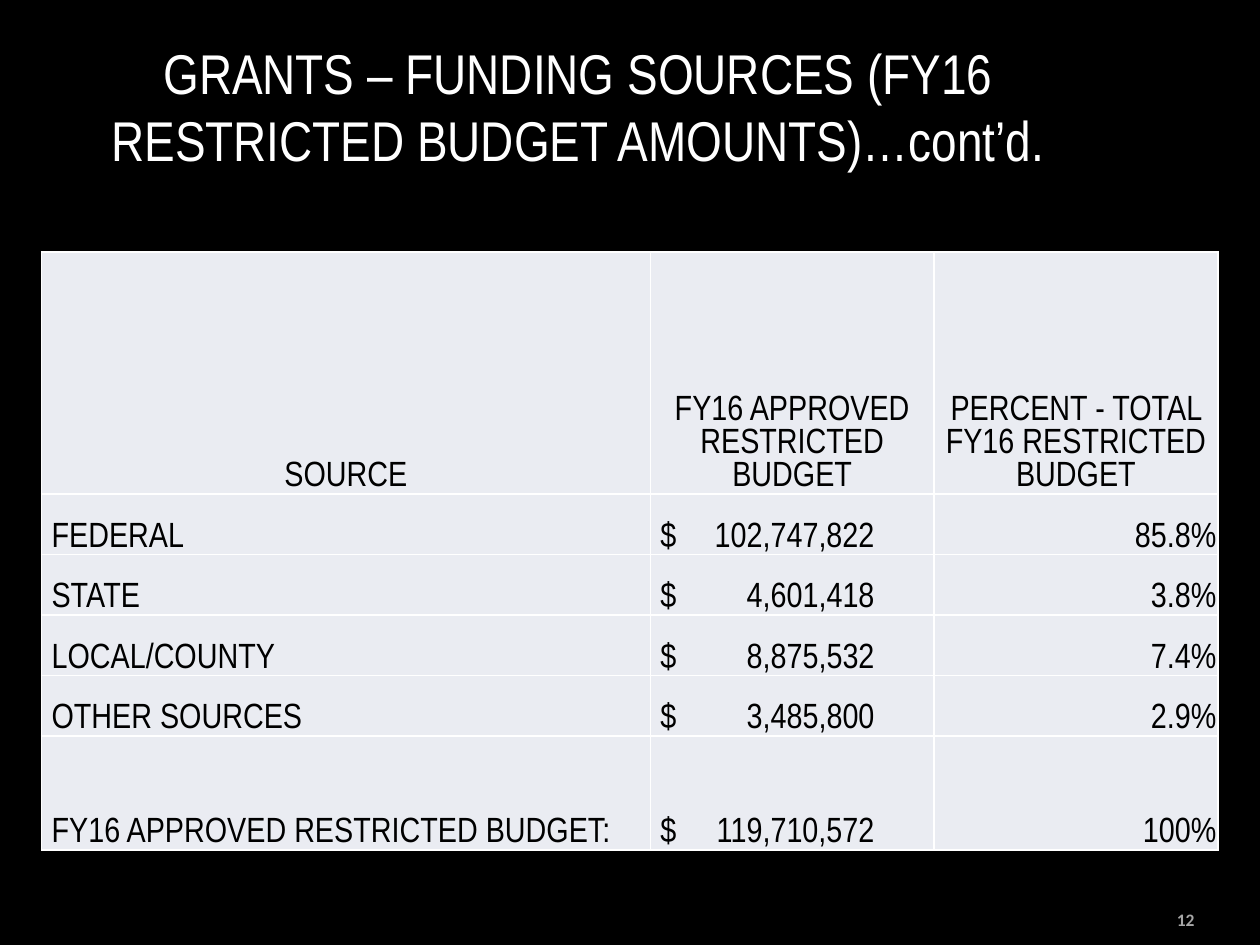
from lxml import etree
from pptx import Presentation, util as u
from pptx.dml.color import RGBColor
from pptx.enum import text
from pptx.oxml import ns

BLACK = RGBColor(0x00, 0x00, 0x00)
WHITE = RGBColor(0xFF, 0xFF, 0xFF)
GREY = RGBColor(0xA6, 0xA6, 0xA6)
PALE = RGBColor(0xEA, 0xEC, 0xF2)

LEFT, MID, RIGHT = text.PP_ALIGN.LEFT, text.PP_ALIGN.CENTER, text.PP_ALIGN.RIGHT
BOTTOM, MIDDLE = text.MSO_ANCHOR.BOTTOM, text.MSO_ANCHOR.MIDDLE

TITLE = "GRANTS – FUNDING SOURCES (FY16 RESTRICTED BUDGET AMOUNTS)…cont’d."
ROWS = [
    ("SOURCE", "FY16 APPROVED RESTRICTED BUDGET", "PERCENT - TOTAL FY16 RESTRICTED BUDGET"),
    ("FEDERAL", "$\t102,747,822", "85.8%"),
    ("STATE", "$\t4,601,418", "3.8%"),
    ("LOCAL/COUNTY", "$\t8,875,532", "7.4%"),
    ("OTHER SOURCES", "$\t3,485,800", "2.9%"),
    ("FY16 APPROVED RESTRICTED BUDGET:", "$\t119,710,572", "100%"),
]
WIDTHS = [12.27, 5.72, 5.72]
HEIGHTS = [4.88] + [1.22] * 4 + [2.29]
ALIGNS = [LEFT, LEFT, RIGHT]


def put(obj, vals):
    """Set each attribute named in a dict of format values."""
    for key, val in vals.items():
        setattr(obj, key, val)


def write(par, words, align, color, **face):
    """Write one run of styled text into a paragraph."""
    par.alignment = align
    run = par.add_run()
    run.text = words
    put(run.font, face)
    run.font.color.rgb = color


def label(slide, words, box, anchor, align, color, **face):
    """Add a wrapped text box."""
    frame = slide.shapes.add_textbox(*map(u.Cm, box)).text_frame
    put(frame, {"word_wrap": True, "vertical_anchor": anchor})
    write(frame.paragraphs[0], words, align, color, **face)
    return frame


def tab(par, pos):
    """Give a paragraph one right-aligned tab stop."""
    tabs = etree.SubElement(par._p.get_or_add_pPr(), ns.qn("a:tabLst"))
    etree.SubElement(tabs, ns.qn("a:tab"), pos=str(u.Cm(pos)), algn="r")


def edge(cell):
    """Draw a thin white line on all sides of a cell."""
    props = cell._tc.get_or_add_tcPr()
    for spot, side in enumerate(("lnL", "lnR", "lnT", "lnB")):
        line = etree.Element(ns.qn("a:" + side), w=str(u.Pt(1)))
        fill = etree.SubElement(line, ns.qn("a:solidFill"))
        etree.SubElement(fill, ns.qn("a:srgbClr"), val=str(WHITE))
        props.insert(spot, line)


def fill_cell(cell, words, align):
    """Format one table cell and write its text."""
    pad = 0.03 if align == MID else 0.2
    put(cell, {"margin_left": u.Cm(pad), "margin_right": u.Cm(0.03),
               "margin_top": u.Cm(0.03), "margin_bottom": 0,
               "vertical_anchor": BOTTOM})
    cell.fill.solid()
    cell.fill.fore_color.rgb = PALE
    edge(cell)
    par = cell.text_frame.paragraphs[0]
    write(par, words, align, BLACK, name="Arial Narrow", size=u.Pt(20), bold=False)
    if "\t" in words:
        tab(par, 4.32)


def grid(slide):
    """Add the table of funding sources."""
    box = map(u.Cm, (0.84, 5.08, sum(WIDTHS), sum(HEIGHTS)))
    table = slide.shapes.add_table(len(ROWS), len(WIDTHS), *box).table
    put(table, {"first_row": False, "horz_banding": False})
    for col, width in zip(table.columns, WIDTHS):
        col.width = u.Cm(width)
    for r, (row, height) in enumerate(zip(ROWS, HEIGHTS)):
        table.rows[r].height = u.Cm(height)
        for c, words in enumerate(row):
            fill_cell(table.cell(r, c), words, ALIGNS[c] if r else MID)


def main():
    """Build and save the slide."""
    deck = Presentation()
    put(deck, {"slide_width": u.Cm(25.4), "slide_height": u.Cm(19.05)})
    slide = deck.slides.add_slide(deck.slide_layouts[6])
    slide.background.fill.solid()
    slide.background.fill.fore_color.rgb = BLACK
    grid(slide)
    head = label(slide, TITLE, (0.99, 0.64, 21.34, 2.97), BOTTOM, MID, WHITE,
                 name="Arial Narrow", size=u.Pt(32))
    head.paragraphs[0].space_before = u.Pt(4)
    label(slide, "12", (21.89, 18.19, 2.44, 0.69), MIDDLE, RIGHT, GREY,
          name="Calibri", size=u.Pt(10), bold=True)
    deck.save("out.pptx")


if __name__ == "__main__":
    main()
